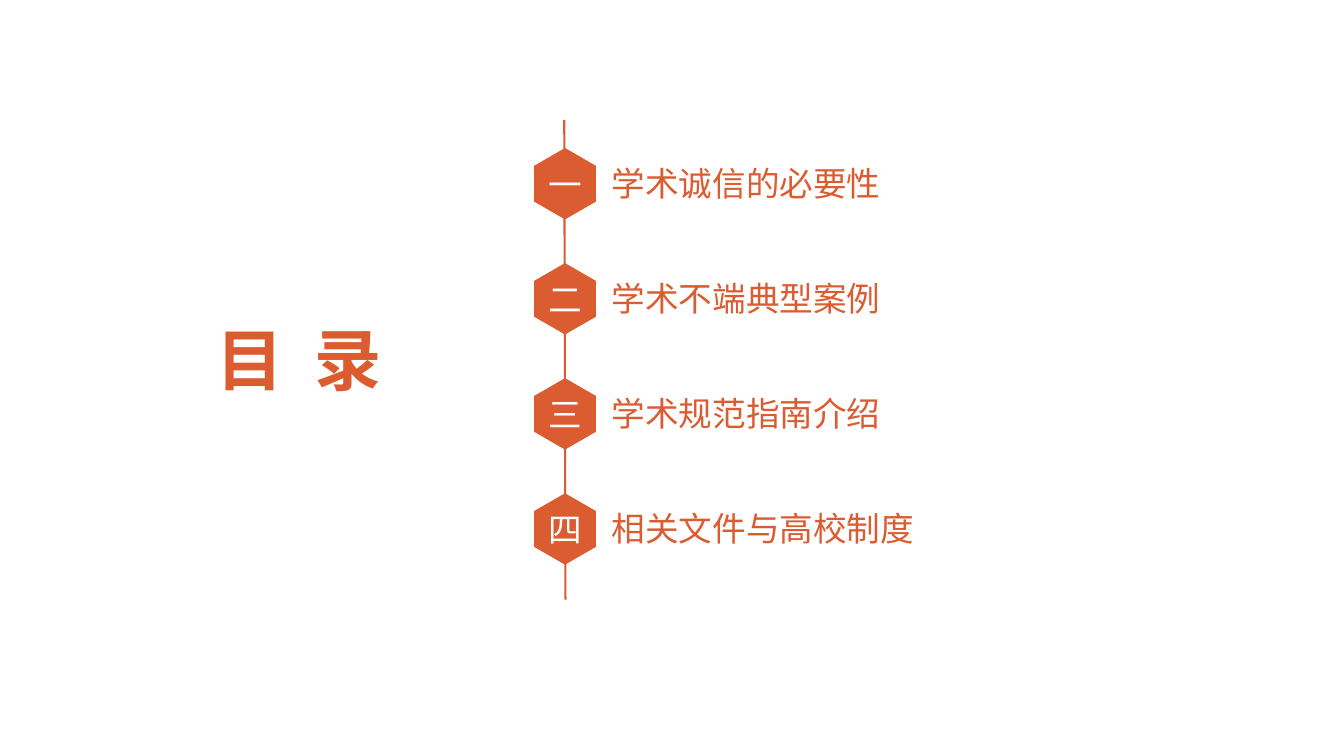
from dataclasses import dataclass

import pptx
import pptx.dml.color
import pptx.enum.shapes
import pptx.enum.text
import pptx.oxml.ns
import pptx.util
from lxml import etree

Cm = pptx.util.Cm
Pt = pptx.util.Pt
ORANGE = "DC5C31"
WHITE = "FFFFFF"
CENTER = pptx.enum.text.PP_ALIGN.CENTER
ANCHOR = pptx.enum.text.MSO_ANCHOR

AXIS_X = 14.24
FIRST_TOP = 3.73
ROW_PITCH = 2.9
HEX_WIDTH, HEX_HEIGHT = 1.56, 1.8
COMPARISON_LAYOUT = 4


@dataclass(frozen=True)
class Chapter:
    numeral: str
    heading: str


CHAPTERS = [
    Chapter("一", "学术诚信的必要性"),
    Chapter("二", "学术不端典型案例"),
    Chapter("三", "学术规范指南介绍"),
    Chapter("四", "相关文件与高校制度"),
]


def color(value: str) -> pptx.dml.color.RGBColor:
    return pptx.dml.color.RGBColor.from_string(value)


def write(shape, text: str, size: int, ink: str, bold: bool = False):
    """Put one formatted line in the shape and return its paragraph."""
    frame = shape.text_frame
    frame.text = text
    frame.auto_size = pptx.enum.text.MSO_AUTO_SIZE.NONE
    para = frame.paragraphs[0]
    font = para.runs[0].font
    font.name, font.size, font.bold = "Arial", Pt(size), bold
    font.color.rgb = color(ink)
    return para


def place(shape, left: float, top: float, width: float, height: float) -> None:
    shape.left, shape.top = Cm(left), Cm(top)
    shape.width, shape.height = Cm(width), Cm(height)


def add_title(page) -> None:
    title = page.shapes.title
    place(title, 4.2, 7.9, 6.68, 1.96)
    para = write(title, "目 录", 48, ORANGE, bold=True)
    para.alignment = CENTER
    para.runs[0].font._element.set("spc", "550")
    title.text_frame.word_wrap = False
    title.text_frame.vertical_anchor = ANCHOR.TOP


def add_axis(page) -> None:
    axis = page.shapes.add_connector(
        pptx.enum.shapes.MSO_CONNECTOR.STRAIGHT,
        Cm(14.22), Cm(3.02), Cm(14.25), Cm(15.11))
    axis.line.color.rgb = color(ORANGE)
    axis.line.width = Pt(1.5)
    etree.SubElement(axis._element.spPr, pptx.oxml.ns.qn("a:effectLst"))


def add_heading(holder, chapter: Chapter, top: float) -> None:
    place(holder, 15.16, top + 0.36, 12.22, 1.12)
    para = write(holder, chapter.heading, 24, ORANGE)
    properties = para._element.get_or_add_pPr()
    properties.set("marL", "0")
    properties.set("indent", "0")
    etree.SubElement(properties, pptx.oxml.ns.qn("a:buNone"))
    para.line_spacing = 0.9
    para.space_before = Pt(0)
    holder.text_frame.vertical_anchor = ANCHOR.TOP


def add_hexagon(page, chapter: Chapter, top: float) -> None:
    left, right = AXIS_X - HEX_WIDTH / 2, AXIS_X + HEX_WIDTH / 2
    shoulder, bottom = top + HEX_HEIGHT / 4, top + HEX_HEIGHT
    hip = bottom - HEX_HEIGHT / 4
    corners = [(right, shoulder), (right, hip), (AXIS_X, bottom),
               (left, hip), (left, shoulder)]
    builder = page.shapes.build_freeform(Cm(AXIS_X), Cm(top))
    builder.add_line_segments([(Cm(x), Cm(y)) for x, y in corners], close=True)
    hexagon = builder.convert_to_shape()
    hexagon.shadow.inherit = False
    hexagon.fill.solid()
    hexagon.fill.fore_color.rgb = color(ORANGE)
    hexagon.line.fill.background()
    write(hexagon, chapter.numeral, 24, WHITE).alignment = CENTER
    hexagon.text_frame.vertical_anchor = ANCHOR.MIDDLE


def main() -> None:
    deck = pptx.Presentation()
    deck.slide_width, deck.slide_height = Cm(33.87), Cm(19.05)
    page = deck.slides.add_slide(deck.slide_layouts[COMPARISON_LAYOUT])
    add_title(page)
    add_axis(page)
    holders = list(page.placeholders)[1:]
    for row, (holder, chapter) in enumerate(zip(holders, CHAPTERS)):
        top = FIRST_TOP + row * ROW_PITCH
        add_heading(holder, chapter, top)
        add_hexagon(page, chapter, top)
    deck.save("out.pptx")


if __name__ == "__main__":
    main()
